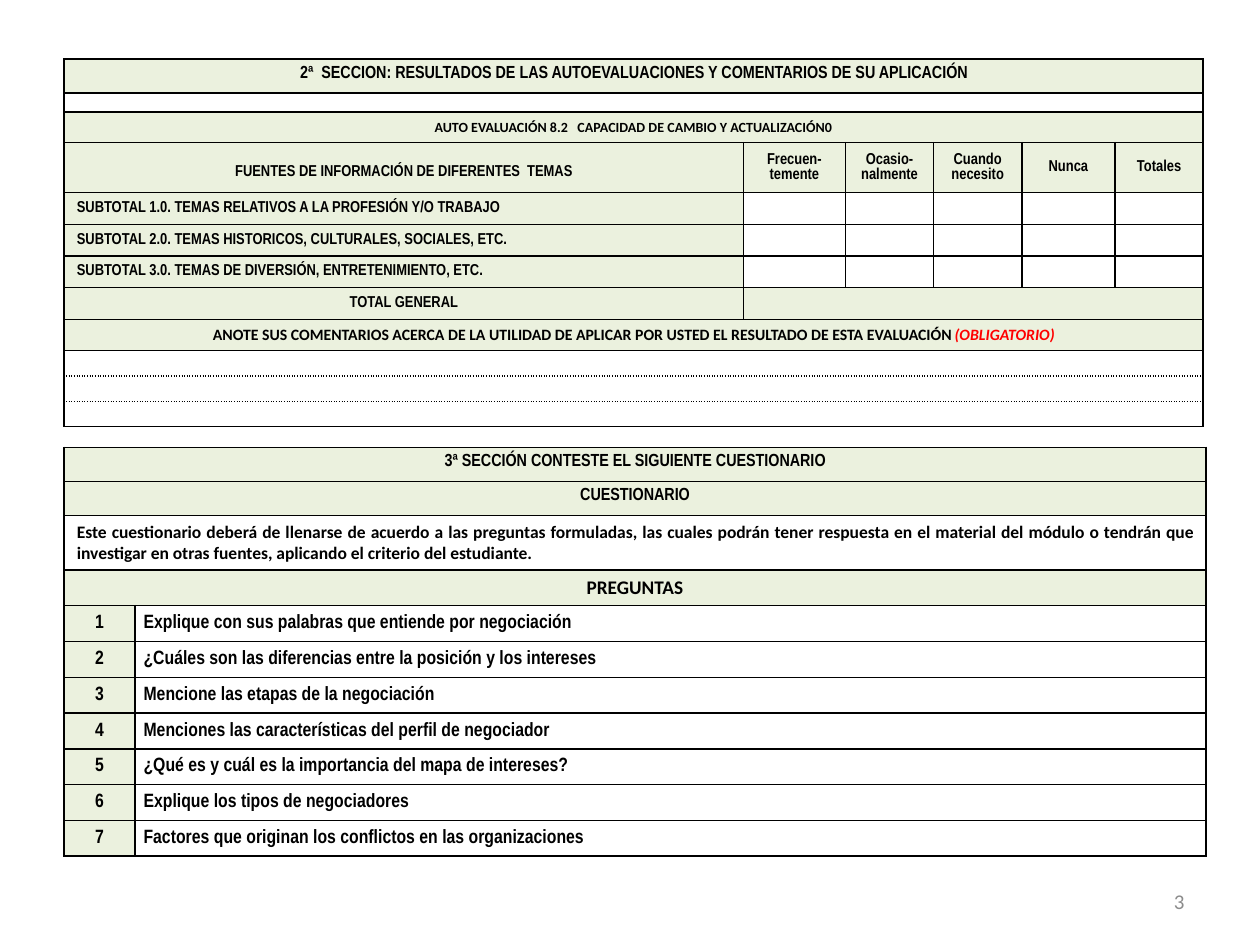
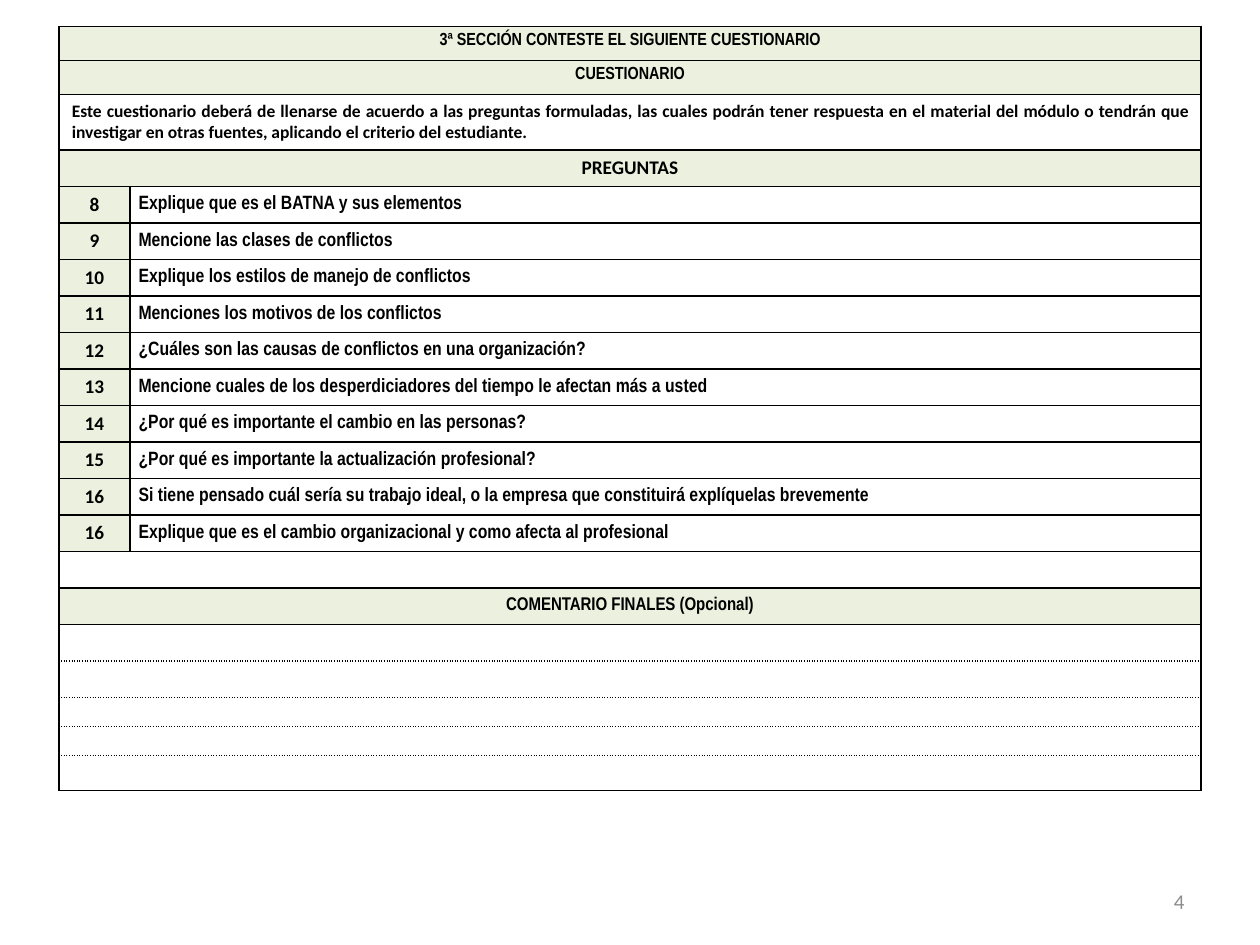
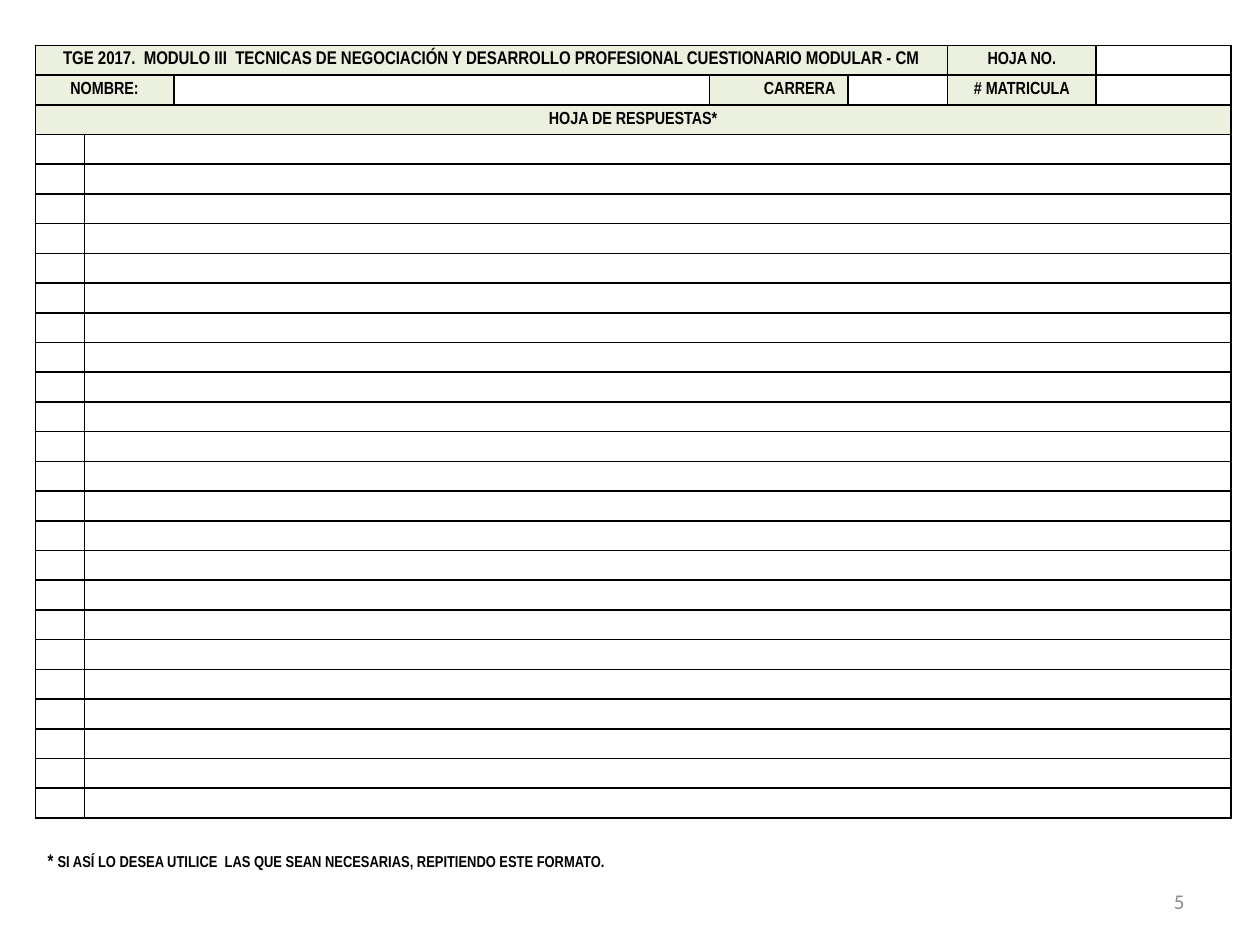
from dataclasses import dataclass

from lxml import etree
from pptx import Presentation
from pptx import util as u
from pptx.dml.color import RGBColor
from pptx.enum import text as t
from pptx.oxml import ns


@dataclass(frozen=True)
class Theme:
    narrow: str = "Arial Narrow"
    wide: str = "Calibri"
    ink: str = "000000"
    band: str = "EBF1DE"
    paper: str = "FFFFFF"
    alert: str = "FF0000"
    muted: str = "8C8C8C"
    blank: float = 4
    caption: float = 8
    label: float = 9
    heading: float = 10
    title: float = 10.5
    question: float = 11
    number: float = 12


theme = Theme()
LINES = {"solid": (1, "solid"), "thin": (0.75, "solid"), "dots": (0.75, "sysDot")}
CENTER, LEFT, RIGHT, JUSTIFY = (
    t.PP_ALIGN.CENTER, t.PP_ALIGN.LEFT, t.PP_ALIGN.RIGHT, t.PP_ALIGN.JUSTIFY)
TOP, MIDDLE = t.MSO_ANCHOR.TOP, t.MSO_ANCHOR.MIDDLE


def write(box, text, size=theme.heading, font=theme.narrow, color=theme.ink, bold=True,
          italic=False, align=CENTER, anchor=MIDDLE, inset=(0.1, 0.05), before=None,
          spacing=None, fill=None):
    holder = box if hasattr(box, "margin_left") else box.text_frame
    holder.margin_left = holder.margin_right = u.Inches(inset[0])
    holder.margin_top = holder.margin_bottom = u.Inches(inset[1])
    holder.vertical_anchor = anchor
    box.text_frame.word_wrap = True
    if fill:
        box.fill.solid()
        box.fill.fore_color.rgb = RGBColor.from_string(fill)
    paragraph = box.text_frame.paragraphs[0]
    paragraph.alignment = align
    if before:
        paragraph.space_before = u.Pt(before)
    if spacing:
        paragraph.line_spacing = spacing
    run = paragraph.add_run()
    run.text = text
    run.font.name, run.font.size = font, u.Pt(size)
    run.font.bold, run.font.italic = bold, italic
    run.font.color.rgb = RGBColor.from_string(color)


def add_grid(slide, left, top, columns, rows, edges, spans):
    table = slide.shapes.add_table(
        len(rows), len(columns), u.Inches(left), u.Inches(top),
        u.Inches(sum(columns)), u.Inches(sum(rows))).table
    table.first_row = table.horz_banding = False
    for column, width in zip(table.columns, columns):
        column.width = u.Inches(width)
    for index, (row, height) in enumerate(zip(table.rows, rows)):
        row.height = u.Inches(height)
        for cell in row.cells:
            cell.margin_left = cell.margin_right = cell.margin_top = cell.margin_bottom = 0
            properties = cell._tc.get_or_add_tcPr()
            sides = {"lnL": "solid", "lnR": "solid", "lnT": edges[index], "lnB": edges[index + 1]}
            for side, style in sides.items():
                width, dash = LINES[style]
                line = etree.SubElement(properties, ns.qn(f"a:{side}"), w=str(u.Pt(width)))
                color = etree.SubElement(line, ns.qn("a:solidFill"))
                etree.SubElement(color, ns.qn("a:srgbClr"), val=theme.ink)
                etree.SubElement(line, ns.qn("a:prstDash"), val=dash)
            cell.fill.solid()
            cell.fill.fore_color.rgb = RGBColor.from_string(theme.paper)
            etree.SubElement(cell.text_frame.paragraphs[0]._p, ns.qn("a:endParaRPr"),
                             sz=str(int(theme.blank * 100)))
    for row, first, last in spans:
        table.cell(row, first).merge(table.cell(row, last))
    return table


presentation = Presentation()
presentation.slide_width, presentation.slide_height = u.Inches(10), u.Inches(7.5)
slides = []
for number in (3, 4, 5):
    slide = presentation.slides.add_slide(presentation.slide_layouts[6])
    number_box = slide.shapes.add_textbox(
        u.Inches(7.17), u.Inches(6.95), u.Inches(2.33), u.Inches(0.4))
    write(number_box, str(number), size=theme.number, font=theme.wide, color=theme.muted,
          bold=False, align=RIGHT)
    slides.append(slide)
results_slide, questions_slide, answers_slide = slides

results = add_grid(
    results_slide, 0.51, 0.47, [5.39, 0.81, 0.7, 0.7, 0.74, 0.7],
    [0.27, 0.15, 0.24, 0.4] + [0.25] * 5 + [0.2] * 3,
    ["solid"] * 3 + ["thin"] * 7 + ["dots"] * 2 + ["solid"],
    [(row, 0, 5) for row in (0, 1, 2, 8, 9, 10, 11)] + [(7, 1, 5)])
write(results.cell(0, 0), "2ª  SECCION: RESULTADOS DE LAS AUTOEVALUACIONES Y COMENTARIOS DE SU APLICACIÓN",
      anchor=TOP, fill=theme.band)
write(results.cell(2, 0), "AUTO EVALUACIÓN 8.2   CAPACIDAD DE CAMBIO Y ACTUALIZACIÓN0",
      size=theme.caption, font=theme.wide, fill=theme.band)
write(results.cell(3, 0), "FUENTES DE INFORMACIÓN DE DIFERENTES  TEMAS",
      size=theme.label, spacing=1.7, fill=theme.band)
frequencies = ["Frecuen-temente", "Ocasio-nalmente", "Cuando necesito", "Nunca", "Totales"]
for column, frequency in enumerate(frequencies, 1):
    write(results.cell(3, column), frequency, size=theme.label, fill=theme.band)
subtotals = [
    "SUBTOTAL 1.0. TEMAS RELATIVOS A LA PROFESIÓN Y/O TRABAJO",
    "SUBTOTAL 2.0. TEMAS HISTORICOS, CULTURALES, SOCIALES, ETC.",
    "SUBTOTAL 3.0. TEMAS DE DIVERSIÓN, ENTRETENIMIENTO, ETC.",
]
for row, subtotal in enumerate(subtotals, 4):
    write(results.cell(row, 0), subtotal, size=theme.label, align=JUSTIFY, fill=theme.band)
write(results.cell(7, 0), "TOTAL GENERAL", size=theme.label, fill=theme.band)
results.cell(7, 1).fill.fore_color.rgb = RGBColor.from_string(theme.band)
comments = results.cell(8, 0)
write(comments, "ANOTE SUS COMENTARIOS ACERCA DE LA UTILIDAD DE APLICAR POR USTED EL RESULTADO DE ESTA EVALUACIÓN ",
      size=theme.label, font=theme.wide, fill=theme.band)
write(comments, "(OBLIGATORIO)", size=theme.label, font=theme.wide, color=theme.alert, italic=True)

first_questions = [
    ("1", "Explique con sus palabras que entiende por negociación"),
    ("2", "¿Cuáles son las diferencias entre la posición y los intereses"),
    ("3", "Mencione las etapas de la negociación"),
    ("4", "Menciones las características del perfil de negociador"),
    ("5", "¿Qué es y cuál es la importancia del mapa de intereses?"),
    ("6", "Explique los tipos de negociadores"),
    ("7", "Factores que originan los conflictos en las organizaciones"),
]
last_questions = [
    ("8", "Explique que es el BATNA y sus elementos"),
    ("9", "Mencione las clases de conflictos"),
    ("10", "Explique los estilos de manejo de conflictos"),
    ("11", "Menciones los motivos de los conflictos"),
    ("12", "¿Cuáles son las causas de conflictos en una organización?"),
    ("13", "Mencione cuales de los desperdiciadores del tiempo le afectan más a usted"),
    ("14", "¿Por qué es importante el cambio en las personas?"),
    ("15", "¿Por qué es importante la actualización profesional?"),
    ("16", "Si tiene pensado cuál sería su trabajo ideal, o la empresa que constituirá explíquelas brevemente"),
    ("16", "Explique que es el cambio organizacional y como afecta al profesional"),
]
question_columns = [0.56, 8.5]
first_rows = [0.27, 0.27, 0.43] + [2.27 / 8] * 8
last_rows = [0.27, 0.27, 0.44] + [0.29] * 15 + [0.23, 0.23, 0.28]
first_table = add_grid(
    results_slide, 0.51, 3.55, question_columns, first_rows,
    ["solid"] * (len(first_rows) + 1), [(row, 0, 1) for row in range(4)])
last_table = add_grid(
    questions_slide, 0.47, 0.21, question_columns, last_rows,
    ["solid"] * 17 + ["dots"] * 4 + ["solid"],
    [(row, 0, 1) for row in (*range(4), *range(14, 21))])
questionnaires = [
    (first_table, first_questions, theme.narrow),
    (last_table, last_questions, theme.wide),
]
for table, questions, number_font in questionnaires:
    for row, heading in enumerate(["3ª SECCIÓN CONTESTE EL SIGUIENTE CUESTIONARIO", "CUESTIONARIO"]):
        write(table.cell(row, 0), heading, anchor=TOP, before=3.6, fill=theme.band)
    write(table.cell(2, 0),
          "Este cuestionario deberá de llenarse de acuerdo a las preguntas formuladas, las cuales "
          "podrán tener respuesta en el material del módulo o tendrán que investigar en otras "
          "fuentes, aplicando el criterio del estudiante.",
          font=theme.wide, align=JUSTIFY, before=3.6)
    write(table.cell(3, 0), "PREGUNTAS", size=theme.question, font=theme.wide, before=4,
          fill=theme.band)
    for row, (number, question) in enumerate(questions, 4):
        write(table.cell(row, 0), number, size=theme.question, font=number_font, fill=theme.band)
        write(table.cell(row, 1), question, size=theme.question, align=JUSTIFY,
              inset=(0.07, 0.04), before=4)
write(last_table.cell(15, 0), "COMENTARIO FINALES (Opcional)", size=theme.title, fill=theme.band)

answer_rows = 26
answers = add_grid(
    answers_slide, 0.28, 0.36, [0.39, 0.71, 4.25, 1.1, 0.79, 1.18, 1.07],
    [6.14 / answer_rows] * answer_rows, ["solid"] * (answer_rows + 1),
    [(0, 0, 4), (1, 0, 1), (2, 0, 6)] + [(row, 1, 6) for row in range(3, answer_rows)])
answer_labels = [
    (0, 0, "TGE 2017.  MODULO III  TECNICAS DE NEGOCIACIÓN Y DESARROLLO PROFESIONAL CUESTIONARIO MODULAR - CM",
     theme.title, CENTER),
    (0, 5, "HOJA NO.", theme.heading, CENTER),
    (1, 0, "NOMBRE:", theme.heading, CENTER),
    (1, 3, "CARRERA", theme.heading, RIGHT),
    (1, 5, "# MATRICULA", theme.heading, CENTER),
    (2, 0, "HOJA DE RESPUESTAS*", theme.heading, CENTER),
]
for row, column, label, size, align in answer_labels:
    write(answers.cell(row, column), label, size=size, align=align, inset=(0.1, 0.02),
          before=3.6, fill=theme.band)
footnote = answers_slide.shapes.add_textbox(
    u.Inches(0.28), u.Inches(6.69), u.Inches(9.29), u.Inches(0.29))
write(footnote, "* ", size=theme.title, align=LEFT, anchor=TOP)
write(footnote, "SI ASÍ LO DESEA UTILICE  LAS QUE SEAN NECESARIAS, REPITIENDO ESTE FORMATO.",
      size=theme.label, align=LEFT, anchor=TOP)

presentation.save("out.pptx")
